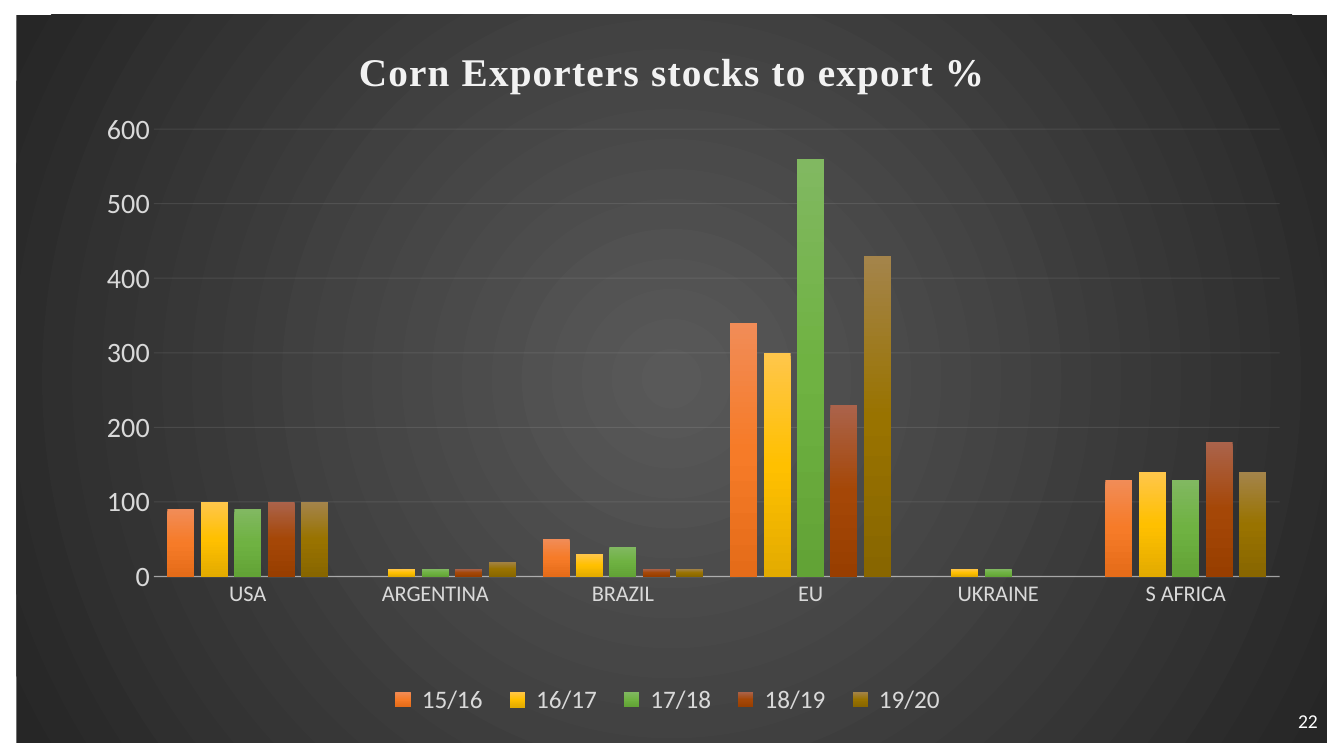
from lxml.etree import SubElement
from pptx import Presentation
from pptx.chart.data import CategoryChartData
from pptx.dml.color import RGBColor
from pptx.enum.chart import XL_CHART_TYPE, XL_LEGEND_POSITION, XL_TICK_MARK
from pptx.enum.text import MSO_ANCHOR, PP_ALIGN
from pptx.oxml import parse_xml
from pptx.oxml.ns import nsdecls, qn
from pptx.util import Inches, Pt

COUNTRIES = ["USA", "ARGENTINA", "BRAZIL", "EU", "UKRAINE", "S AFRICA"]
SEASONS = [
    (" 15/16", [90, 0, 50, 340, 0, 130], ["F18C57", "F67B28", "E56C19"]),
    (" 16/17", [100, 10, 30, 300, 10, 140], ["FFC64B", "FFC000", "E3AB00"]),
    (" 17/18", [90, 10, 40, 560, 10, 130], ["81B861", "6FB242", "62A336"]),
    (" 18/19", [100, 10, 10, 230, 0, 180], ["AB634B", "A54707", "983E00"]),
    (" 19/20", [100, 20, 10, 430, 0, 140], ["A4844B", "997300", "886600"]),
]
LINEAR = '<a:lin ang="5400000" scaled="0"/>'
CIRCLE = ('<a:path path="circle"><a:fillToRect l="50000" t="50000" '
          'r="50000" b="50000"/></a:path>')


def color(hex_string):
    return RGBColor.from_string(hex_string)


def gradient(colors, direction):
    """Return a gradFill element with evenly spaced stops."""
    step = 100000 // (len(colors) - 1)
    stops = "".join(f'<a:gs pos="{i * step}"><a:srgbClr val="{c}"/></a:gs>'
                    for i, c in enumerate(colors))
    return parse_xml(f'<a:gradFill {nsdecls("a")} rotWithShape="1">'
                     f'<a:gsLst>{stops}</a:gsLst>{direction}</a:gradFill>')


def set_layout(parent, after, area, inner=False):
    """Place a chart part by percentages of the chart's size."""
    for old in parent.findall(qn("c:layout")):
        parent.remove(old)
    layout = parse_xml(f'<c:layout {nsdecls("c")}><c:manualLayout/></c:layout>')
    pairs = [("layoutTarget", "inner")] if inner else []
    pairs += [("xMode", "edge"), ("yMode", "edge")]
    pairs += [(tag, share / 100) for tag, share in zip("xywh", area)]
    for tag, value in pairs:
        SubElement(layout[0], qn(f"c:{tag}")).set("val", str(value))
    if after is None:
        parent.insert(0, layout)
    else:
        after.addnext(layout)


class Deck:
    font, light, pale = "Calibri", "D9D9D9", "F2F2F2"

    def __init__(self, width, height):
        self.prs = Presentation()
        self.prs.slide_width, self.prs.slide_height = Inches(width), Inches(height)
        self.s = self.prs.slides.add_slide(self.prs.slide_layouts[6])

    def box(self, x, y, w, h):
        """Turn percentages of the slide's size into lengths."""
        width, height = self.prs.slide_width / 100, self.prs.slide_height / 100
        return int(x * width), int(y * height), int(w * width), int(h * height)

    def style(self, font, size, hex_string, name=None, bold=False):
        font.name, font.size, font.bold = name or self.font, Pt(size), bold
        font.color.rgb = color(hex_string)

    def line(self, line, width, opacity):
        line.width = Pt(width)
        line.color.rgb = color(self.pale)
        rgb = line.fill._xPr.find(".//" + qn("a:srgbClr"))
        SubElement(rgb, qn("a:alpha")).set("val", str(opacity * 1000))

    def text(self, words, area, size, hex_string, align):
        tf = self.s.shapes.add_textbox(*self.box(*area)).text_frame
        tf.word_wrap = True
        tf.vertical_anchor = MSO_ANCHOR.MIDDLE
        p = tf.paragraphs[0]
        p.alignment = align
        r = p.add_run()
        r.text = words
        self.style(r.font, size, hex_string)

    def chart_title(self, chart, words):
        title = chart.chart_title
        r = title.text_frame.paragraphs[0].add_run()
        r.text = words
        self.style(r.font, 28, self.pale, "Times New Roman", True)
        r.font._element.set("spc", "100")
        set_layout(title._element, title._element.find(qn("c:tx")), (25.6, 3.5))

    def axes(self, chart):
        cat, val = chart.category_axis, chart.value_axis
        for axis, size in ((cat, 16), (val, 20)):
            axis.major_tick_mark = axis.minor_tick_mark = XL_TICK_MARK.NONE
            self.style(axis.tick_labels.font, size, self.light)
        self.line(cat.format.line, 1, 54)
        val.format.line.fill.background()
        val.minimum_scale, val.maximum_scale, val.major_unit = 0, 600, 100
        val.tick_labels.number_format = "0"
        val.tick_labels.number_format_is_linked = False
        self.line(val.major_gridlines.format.line, 0.75, 10)

    def legend(self, chart):
        chart.has_legend = True
        legend = chart.legend
        legend.position = XL_LEGEND_POSITION.BOTTOM
        legend.include_in_layout = False
        self.style(legend.font, 18, self.light)
        set_layout(legend._element, legend._element.find(qn("c:legendPos")),
                   (27.5, 91.1, 44.4, 6))

    def column_chart(self, title, categories, series, area):
        data = CategoryChartData(number_format="0")
        data.categories = categories
        for name, values, _ in series:
            data.add_series(name, values)
        chart = self.s.shapes.add_chart(
            XL_CHART_TYPE.COLUMN_CLUSTERED, *self.box(*area), data).chart
        self.style(chart.font, 10, "000000")
        self.chart_title(chart, title)
        self.axes(chart)
        self.legend(chart)
        plot = chart.plots[0]
        plot.gap_width, plot.overlap, plot.vary_by_categories = 100, -24, False
        for bars, (_, _, colors) in zip(plot.series, series):
            bars._element.get_or_add_spPr().insert(0, gradient(colors, LINEAR))
        root = chart._chartSpace
        set_layout(root.chart.plotArea, None, (10.5, 15.7, 85.9, 61.5), True)
        back = parse_xml(f'<c:spPr {nsdecls("c", "a")}><a:ln><a:noFill/></a:ln></c:spPr>')
        back.insert(0, gradient(["595959", "262626"], CIRCLE))
        root.chart.addnext(back)


def main():
    deck = Deck(13.33, 7.5)
    deck.column_chart("Corn Exporters stocks to export %", COUNTRIES, SEASONS,
                      (1.22, 1.97, 97.5, 96.25))
    deck.text("22", (76.3, 92.7, 22.5, 5.3), 14, "FFFFFF", PP_ALIGN.RIGHT)
    deck.prs.save("out.pptx")


if __name__ == "__main__":
    main()
